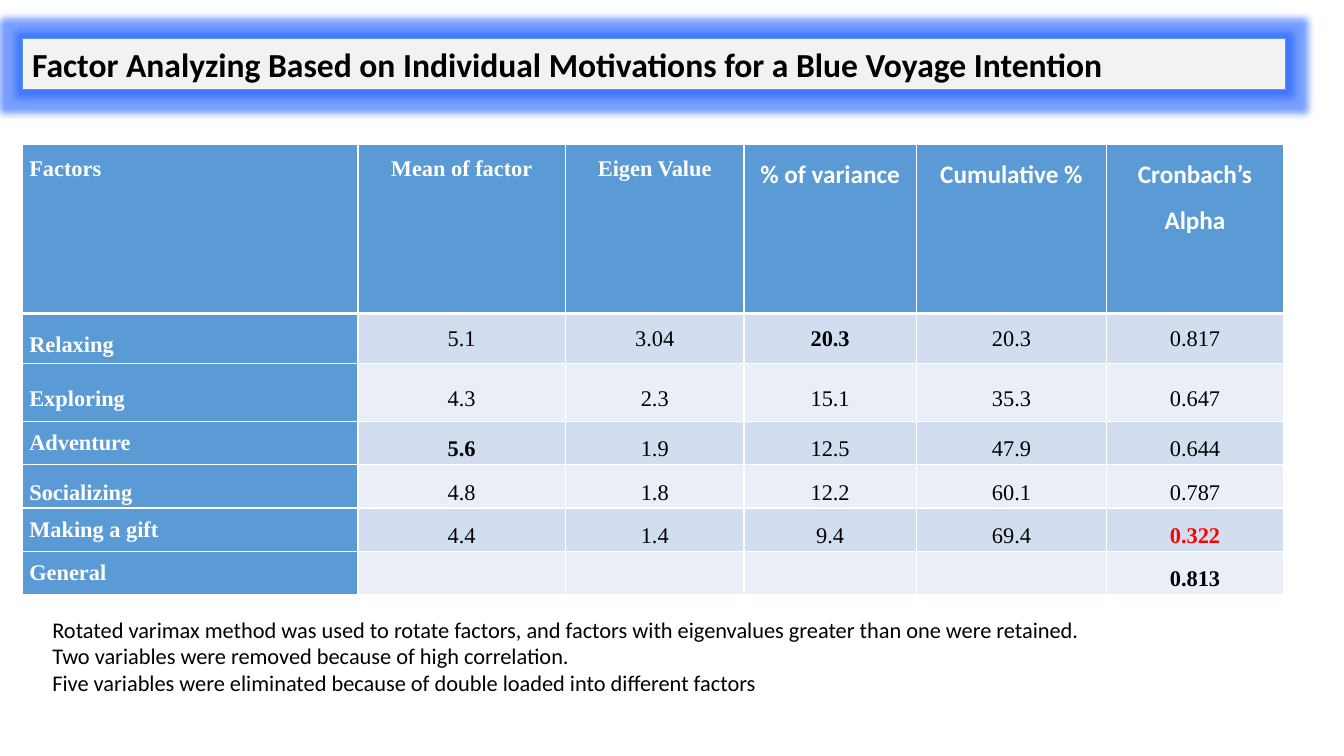
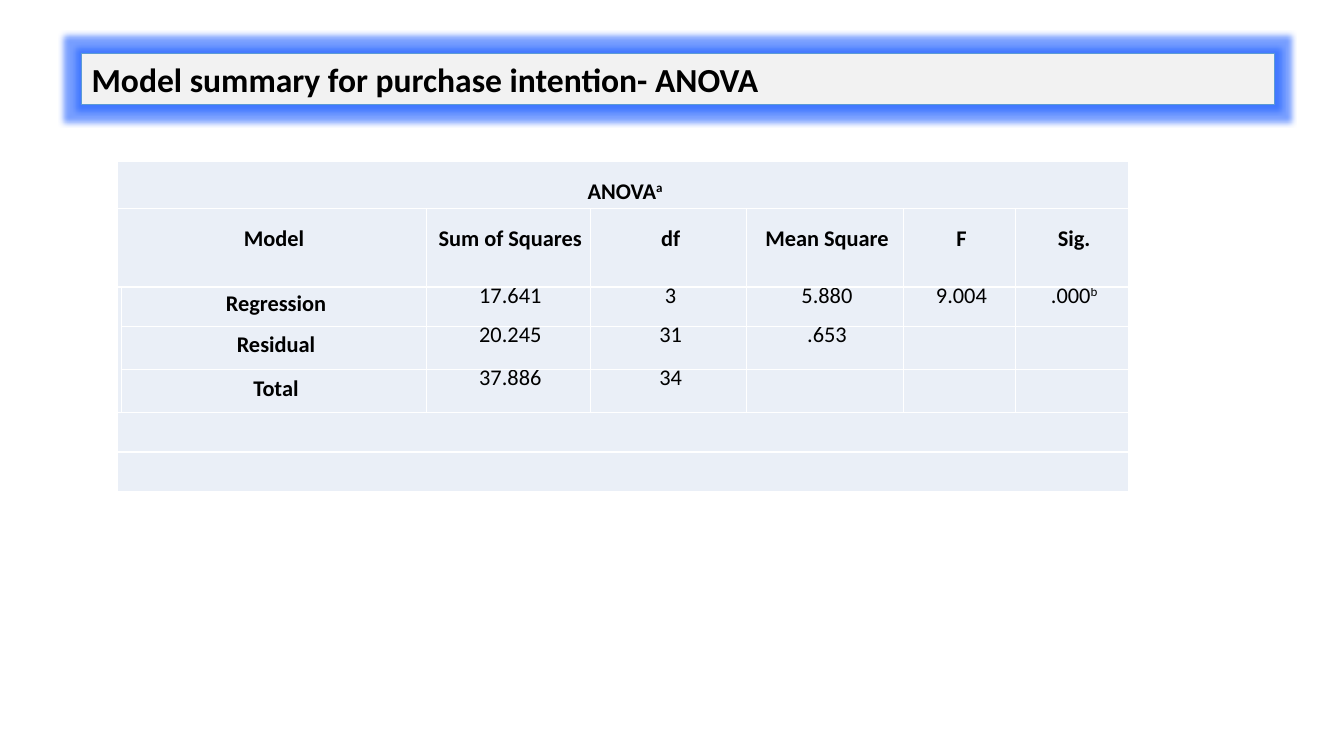
"""Build two slides with factor analysis and ANOVA tables."""
from dataclasses import dataclass
from typing import Any

from lxml import etree
from pptx import Presentation
from pptx.dml.color import RGBColor
from pptx.enum.text import MSO_ANCHOR, MSO_AUTO_SIZE, PP_ALIGN
from pptx.oxml import parse_xml
from pptx.oxml.ns import nsdecls, qn
from pptx.util import Cm, Pt

LEFT, CENTER = PP_ALIGN.LEFT, PP_ALIGN.CENTER
TOP, MIDDLE = MSO_ANCHOR.TOP, MSO_ANCHOR.MIDDLE
FIT_SHAPE = MSO_AUTO_SIZE.SHAPE_TO_FIT_TEXT


@dataclass(frozen=True)
class Theme:
    sans: str = "Calibri"
    serif: str = "Times New Roman"
    black: str = "000000"
    white: str = "FFFFFF"
    red: str = "FF0000"
    blue: str = "5B9BD5"
    band: str = "D2DEEF"
    pale: str = "EAEFF7"
    grey: str = "F2F2F2"
    glow: str = "1F5FFF"
    title: int = 24
    header: int = 18
    body: int = 16


T = Theme()


@dataclass(frozen=True)
class Box:
    x: float
    y: float
    w: float
    h: float

    def lengths(self) -> tuple:
        return Cm(self.x), Cm(self.y), Cm(self.w), Cm(self.h)


@dataclass(frozen=True)
class Cell:
    text: str = ""
    sup: str = ""
    font: str = T.sans
    size: int = T.body
    color: str = T.black
    bold: bool = False
    fill: str = T.pale
    align: Any = CENTER
    anchor: Any = MIDDLE
    spacing: Any = 1.0
    margins: tuple = (0, 0, 0)


@dataclass(frozen=True)
class Span:
    row: int
    col: int
    last_row: int
    last_col: int


def apply(obj: Any, values: dict) -> None:
    for name, value in values.items():
        setattr(obj, name, value)


def add_run(p: Any, text: str, c: Cell) -> Any:
    r = p.add_run()
    r.text = text
    apply(r.font, {"name": c.font, "size": Pt(c.size), "bold": c.bold})
    r.font.color.rgb = RGBColor.from_string(c.color)
    return r


def add_text(slide: Any, box: Box, lines: list[str], style: Cell) -> Any:
    s = slide.shapes.add_textbox(*box.lengths())
    s.fill.solid()
    s.fill.fore_color.rgb = RGBColor.from_string(style.fill)
    tf = s.text_frame
    apply(tf, {"word_wrap": True, "auto_size": FIT_SHAPE, "vertical_anchor": TOP})
    for i, line in enumerate(lines):
        p = tf.add_paragraph() if i else tf.paragraphs[0]
        add_run(p, line, style)
    return s


def add_title(slide: Any, box: Box, text: str, glow: int) -> None:
    s = add_text(slide, box, [text], Cell(size=T.title, bold=True, fill=T.grey))
    s.line.color.rgb = RGBColor.from_string(T.blue)
    s.line.width = Pt(0.75)
    s.shadow.inherit = False
    effects = s._element.spPr.find(qn("a:effectLst"))
    effects.append(parse_xml(
        f'<a:glow {nsdecls("a")} rad="{Pt(glow)}"><a:srgbClr val="{T.glow}">'
        '<a:alpha val="60000"/></a:srgbClr></a:glow>'))


def set_borders(cell: Any, top: int, bottom: int) -> None:
    tc_pr = cell._tc.get_or_add_tcPr()
    for side, width in {"lnL": 1, "lnR": 1, "lnT": top, "lnB": bottom}.items():
        ln = etree.SubElement(tc_pr, qn(f"a:{side}"), w=str(Pt(width)))
        fill = etree.SubElement(ln, qn("a:solidFill"))
        etree.SubElement(fill, qn("a:srgbClr"), val=T.white)


def fill_cell(cell: Any, c: Cell) -> None:
    left, right, top = c.margins
    apply(cell, {"margin_left": Cm(left), "margin_right": Cm(right),
                 "margin_top": Cm(top), "margin_bottom": 0,
                 "vertical_anchor": c.anchor})
    cell.fill.solid()
    cell.fill.fore_color.rgb = RGBColor.from_string(c.fill)
    p = cell.text_frame.paragraphs[0]
    apply(p, {"alignment": c.align, "line_spacing": c.spacing})
    if c.text:
        add_run(p, c.text, c)
    if c.sup:
        r = add_run(p, c.sup, c)
        r._r.get_or_add_rPr().set("baseline", "30000")


def add_table(slide: Any, x: float, y: float, cols: list[float], rows: list[float],
              grid: list[list[Cell]], header_line: int = 1,
              spans: tuple[Span, ...] = ()) -> None:
    box = Box(x, y, sum(cols), sum(rows))
    tbl = slide.shapes.add_table(len(rows), len(cols), *box.lengths()).table
    apply(tbl, {"first_row": False, "horz_banding": False})
    for col, width in zip(tbl.columns, cols):
        col.width = Cm(width)
    for row, height in zip(tbl.rows, rows):
        row.height = Cm(height)
    for i, line in enumerate(grid):
        for j, c in enumerate(line):
            cell = tbl.cell(i, j)
            set_borders(cell, header_line if i == 1 else 1, header_line if i == 0 else 1)
            fill_cell(cell, c)
    for sp in spans:
        tbl.cell(sp.row, sp.col).merge(tbl.cell(sp.last_row, sp.last_col))


def factor_grid() -> list[list[Cell]]:
    heads = ["Factors", "Mean of factor", "Eigen Value", "% of variance",
             "Cumulative %", "Cronbach’s Alpha"]
    data = [
        ["Relaxing", "5.1", "3.04", "20.3", "20.3", "0.817"],
        ["Exploring", "4.3", "2.3", "15.1", "35.3", "0.647"],
        ["Adventure", "5.6", "1.9", "12.5", "47.9", "0.644"],
        ["Socializing", "4.8", "1.8", "12.2", "60.1", "0.787"],
        ["Making a gift", "4.4", "1.4", "9.4", "69.4", "0.322"],
        ["General", "", "", "", "", "0.813"],
    ]
    strong = {(0, 3), (2, 1), (4, 5), (5, 5)}
    wide_labels = {"Relaxing", "Exploring", "Socializing"}
    margins = (0.18, 0.18, 0)
    blue = {"color": T.white, "bold": True, "fill": T.blue, "margins": margins}
    grid = [[Cell(text, font=T.serif if j < 3 else T.sans,
                  size=T.body if j < 3 else T.header, anchor=TOP, spacing=1.5,
                  align=CENTER if j else LEFT, **blue)
             for j, text in enumerate(heads)]]
    for i, (label, *values) in enumerate(data):
        line = [Cell(label, font=T.serif, align=LEFT,
                     spacing=1.5 if label in wide_labels else 1.0, **blue)]
        line += [Cell(text, font=T.serif, bold=(i, j) in strong,
                      color=T.red if text == "0.322" else T.black,
                      fill=T.pale if i % 2 else T.band,
                      spacing=1.5 if i else 1.0, margins=margins)
                 for j, text in enumerate(values, 1)]
        grid.append(line)
    return grid


def anova_grid() -> list[list[Cell]]:
    empty = Cell()
    exact = {"spacing": Pt(16)}
    head = {"bold": True, "anchor": TOP, "margins": (0.1, 0, 0.56), **exact}
    body = {"margins": (0.1, 0, 0), **exact}
    heads = ["Sum of Squares", "df", "Mean Square", "F", "Sig."]
    data = [
        ["Regression", "17.641", "3", "5.880", "9.004", ".000"],
        ["Residual", "20.245", "31", ".653", "", ""],
        ["Total", "37.886", "34", "", "", ""],
    ]
    grid = [[Cell("ANOVA", "a", **head)] + [empty] * 6,
            [Cell("Model", **head), empty] + [Cell(text, **head) for text in heads]]
    for label, *values in data:
        grid.append([empty, Cell(label, bold=True, **body)]
                    + [Cell(text, "b" if text == ".000" else "", anchor=TOP, **body)
                       for text in values])
    return grid + [[empty] * 7] * 2


def factor_slide(prs: Any) -> None:
    slide = prs.slides.add_slide(prs.slide_layouts[6])
    add_title(slide, Box(0.56, 0.97, 31.83, 1.28),
              "Factor Analyzing Based on Individual Motivations for a Blue Voyage Intention", 11)
    add_table(slide, 0.56, 3.63, [8.46, 5.23, 4.5, 4.34, 4.8, 4.45],
              [4.27, 1.27, 1.45] + [1.09] * 4, factor_grid(), header_line=3)
    add_text(slide, Box(1.07, 15.39, 31.83, 3.07), [
        "Rotated varimax method was used to rotate factors, and factors with "
        "eigenvalues greater than one were retained.",
        "Two variables were removed because of high correlation.",
        "Five variables were eliminated because of double loaded into different factors",
    ], Cell(fill=T.white))


def anova_slide(prs: Any) -> None:
    slide = prs.slides.add_slide(prs.slide_layouts[6])
    add_title(slide, Box(2.06, 1.35, 30.05, 1.28),
              "Model summary for purchase intention- ANOVA", 8)
    full_rows = tuple(Span(i, 0, i, 6) for i in (0, 5, 6))
    add_table(slide, 2.97, 4.06, [0.08, 7.67, 4.14, 3.94, 3.94, 2.84, 2.84],
              [1.19, 1.98, 0.99, 1.09, 1.09, 0.99, 0.99], anova_grid(),
              spans=full_rows + (Span(1, 0, 1, 1), Span(2, 0, 4, 0)))


def main() -> None:
    prs = Presentation()
    apply(prs, {"slide_width": Cm(33.87), "slide_height": Cm(19.05)})
    factor_slide(prs)
    anova_slide(prs)
    prs.save("out.pptx")


if __name__ == "__main__":
    main()
